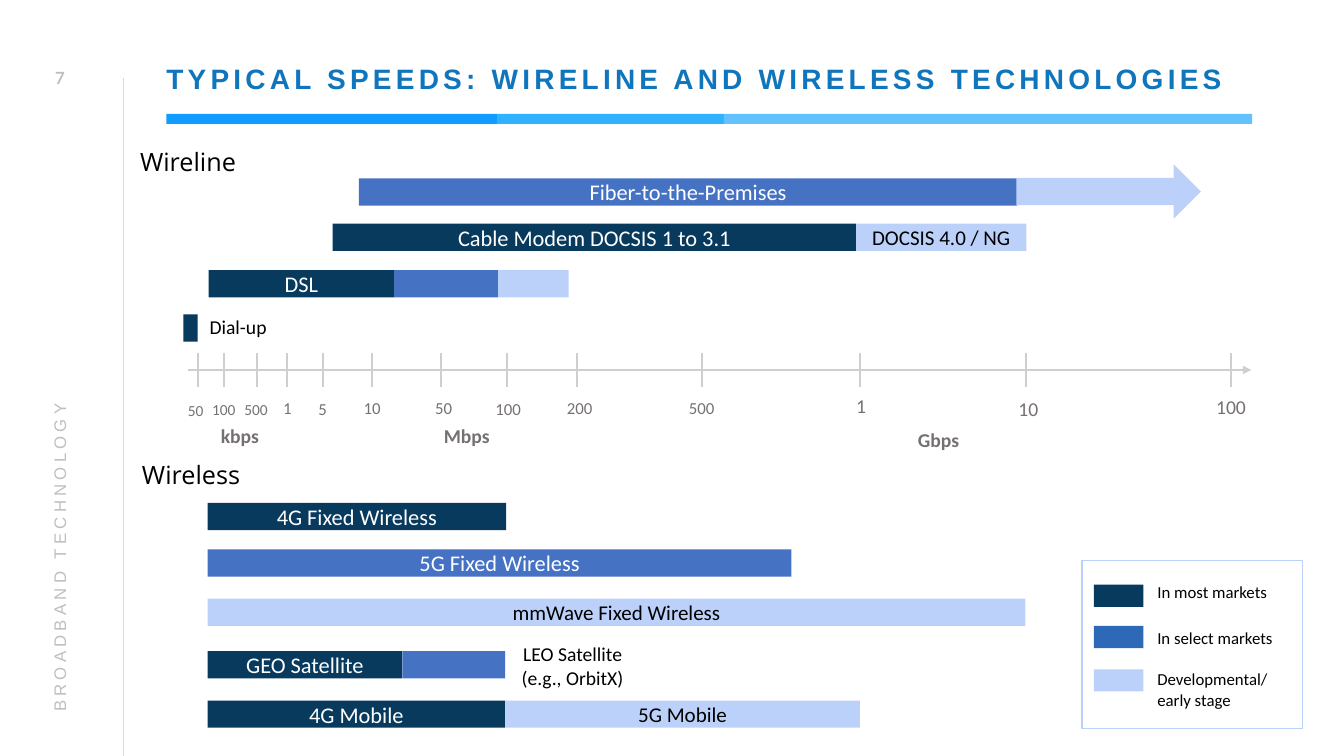
"""Build the slide on typical wireline and wireless broadband speeds."""
from lxml.etree import SubElement
from pptx import Presentation
from pptx.dml.color import RGBColor
from pptx.enum.shapes import MSO_CONNECTOR, MSO_SHAPE
from pptx.enum.text import MSO_ANCHOR, PP_ALIGN
from pptx.oxml.ns import qn
from pptx.util import Inches, Pt

NAVY = RGBColor(0x08, 0x3A, 0x5E)
BLUE = RGBColor(0x46, 0x72, 0xC4)
ROYAL = RGBColor(0x2D, 0x69, 0xB6)
PALE = RGBColor(0xBC, 0xD1, 0xFA)
TITLE = RGBColor(0x0F, 0x75, 0xBC)
WHITE = RGBColor(0xFF, 0xFF, 0xFF)
BLACK = RGBColor(0, 0, 0)
GRAY = RGBColor(0x76, 0x71, 0x71)
MUTED = RGBColor(0xBF, 0xBF, 0xBF)
AXIS = RGBColor(0xD0, 0xCE, 0xCE)
RULE = RGBColor(0xD9, 0xD9, 0xD9)
LEFT, MID = PP_ALIGN.LEFT, PP_ALIGN.CENTER

STRIPE = [
    (3.28, RGBColor(0x11, 0x9D, 0xFF)),
    (2.25, RGBColor(0x31, 0xB2, 0xFF)),
    (5.24, RGBColor(0x62, 0xC1, 0xFF)),
]
HEADS = [("Wireline", 1.29, 1.4), ("Wireless", 1.31, 4.51)]
BAR_H = 0.27
ROWS = [
    (3.56, 1.77, [(6.53, BLUE, "Fiber-to-the-Premises")]),
    (3.3, 2.22, [(5.19, NAVY, "Cable Modem DOCSIS 1 to 3.1"), (1.69, PALE, "DOCSIS 4.0 / NG")]),
    (2.07, 2.68, [(1.84, NAVY, "DSL"), (1.03, BLUE, ""), (0.7, PALE, "")]),
    (1.82, 3.12, [(0.14, NAVY, "")]),
    (2.06, 4.99, [(2.96, NAVY, "4G Fixed Wireless")]),
    (2.06, 5.45, [(5.79, BLUE, "5G Fixed Wireless")]),
    (2.06, 5.94, [(8.11, PALE, "mmWave Fixed Wireless")]),
    (2.06, 6.46, [(1.93, NAVY, "GEO Satellite"), (1.02, BLUE, "")]),
    (2.06, 6.95, [(2.95, NAVY, "4G Mobile"), (3.52, PALE, "5G Mobile")]),
]
TICKS = [
    (1.96, "50", 1.94, 3.93, 11),
    (2.22, "100", 2.22, 3.92, 11),
    (2.55, "500", 2.54, 3.92, 11),
    (2.85, "1", 2.85, 3.9, 12),
    (3.2, "5", 3.2, 3.91, 12),
    (3.69, "10", 3.69, 3.9, 12),
    (4.37, "50", 4.4, 3.9, 12),
    (5.03, "100", 5.04, 3.91, 12),
    (5.72, "200", 5.75, 3.9, 12),
    (6.96, "500", 6.96, 3.9, 12),
    (8.53, "1", 8.54, 3.86, 14),
    (10.18, "10", 10.2, 3.89, 14),
    (12.21, "100", 12.21, 3.87, 14),
]
UNITS = [("kbps", 2.38, 4.16), ("Mbps", 4.63, 4.16), ("Gbps", 9.31, 4.2)]
LEGEND = [
    (NAVY, 5.8, "In most markets", 5.72, 1.31),
    (ROYAL, 6.21, "In select markets", 6.18, 1.56),
    (PALE, 6.64, "Developmental/early stage", 6.59, 1.31),
]

deck = Presentation()
deck.slide_width, deck.slide_height = Inches(13.33), Inches(7.5)
slide = deck.slides.add_slide(deck.slide_layouts[6])


def write(frame, text, size, color, font="Calibri", bold=False, align=LEFT, gap=0):
    frame.word_wrap = True
    par = frame.paragraphs[0]
    par.alignment = align
    run = par.add_run()
    run.text = text
    run.font.name, run.font.size, run.font.bold = font, Pt(size), bold
    run.font.color.rgb = color
    if gap:
        run._r.get_or_add_rPr().set("spc", str(gap * 100))
    return par


def label(text, x, y, w, h, size, color, anchor=MSO_ANCHOR.TOP, **style):
    box = slide.shapes.add_textbox(Inches(x), Inches(y), Inches(w), Inches(h))
    box.text_frame.vertical_anchor = anchor
    write(box.text_frame, text, size, color, **style)
    return box


def block(x, y, w, h, fill, kind=MSO_SHAPE.RECTANGLE):
    shape = slide.shapes.add_shape(kind, Inches(x), Inches(y), Inches(w), Inches(h))
    shape.shadow.inherit = False
    shape.fill.solid()
    shape.fill.fore_color.rgb = fill
    shape.line.fill.background()
    return shape


def line(x1, y1, x2, y2, color, width, arrow=False):
    rule = slide.shapes.add_connector(
        MSO_CONNECTOR.STRAIGHT, Inches(x1), Inches(y1), Inches(x2), Inches(y2))
    rule.line.color.rgb, rule.line.width = color, Pt(width)
    props = rule._element.spPr
    if arrow:
        SubElement(props.find(qn("a:ln")), qn("a:tailEnd"), type="triangle")
    SubElement(props, qn("a:effectLst"))


def frame():
    line(1.22, 7.5, 1.22, 0.77, RULE, 0.5)
    x = 1.65
    for w, fill in STRIPE:
        block(x, 1.13, w, 0.1, fill)
        x += w
    head = label("TYPICAL SPEEDS: WIRELINE AND WIRELESS TECHNOLOGIES", 1.65, 0.4, 10.76, 0.74,
                 20, TITLE, MSO_ANCHOR.MIDDLE, font="Arial", bold=True, gap=3)
    text = head.text_frame
    text.margin_left = text.margin_right = text.margin_bottom = 0
    text.paragraphs[0].line_spacing = 0.9
    side = label("BROADBAND TECHNOLOGY", -2.42, 3.95, 6.02, 0.4, 12, MUTED,
                 MSO_ANCHOR.MIDDLE, font="Arial", gap=3)
    side.rotation = 270
    label("7", 0.27, 0.57, 0.65, 0.4, 12, MUTED, MSO_ANCHOR.MIDDLE,
          font="Lato", bold=True, align=MID)
    for name, x, y in HEADS:
        label(name, x, y, 1.62, 0.4, 18, BLACK, font="Open Sans")


def scale():
    line(1.86, 3.67, 12.41, 3.67, AXIS, 1.5, arrow=True)
    for x, text, mid, y, size in TICKS:
        line(x, 3.5, x, 3.84, AXIS, 1.5)
        label(text, mid - 0.3, y, 0.6, 0.3, size, GRAY, align=MID)
    for text, mid, y in UNITS:
        label(text, mid - 0.4, y, 0.8, 0.34, 14, GRAY, bold=True, align=MID)


def bars():
    for x, y, parts in ROWS:
        for w, fill, text in parts:
            bar = block(x, y, w, BAR_H, fill)
            if text:
                size, ink = (15, BLACK) if fill == PALE else (16, WHITE)
                bar.text_frame.vertical_anchor = MSO_ANCHOR.MIDDLE
                write(bar.text_frame, text, size, ink, align=MID)
            x += w
    block(10.08, 1.63, 1.83, 0.54, PALE, MSO_SHAPE.RIGHT_ARROW)
    label("Dial-up", 1.98, 3.08, 0.87, 0.34, 14, BLACK)
    label("LEO Satellite (e.g., OrbitX)", 5.01, 6.32, 1.34, 0.57, 14, BLACK, align=MID)


def legend():
    panel = block(10.73, 5.56, 2.19, 1.67, WHITE)
    panel.line.color.rgb, panel.line.width = PALE, Pt(1)
    for fill, y, text, top, w in LEGEND:
        block(10.85, y, 0.49, 0.22, fill)
        label(text, 11.38, top, w, 0.3, 12, BLACK)


frame()
scale()
bars()
legend()
deck.save("out.pptx")
